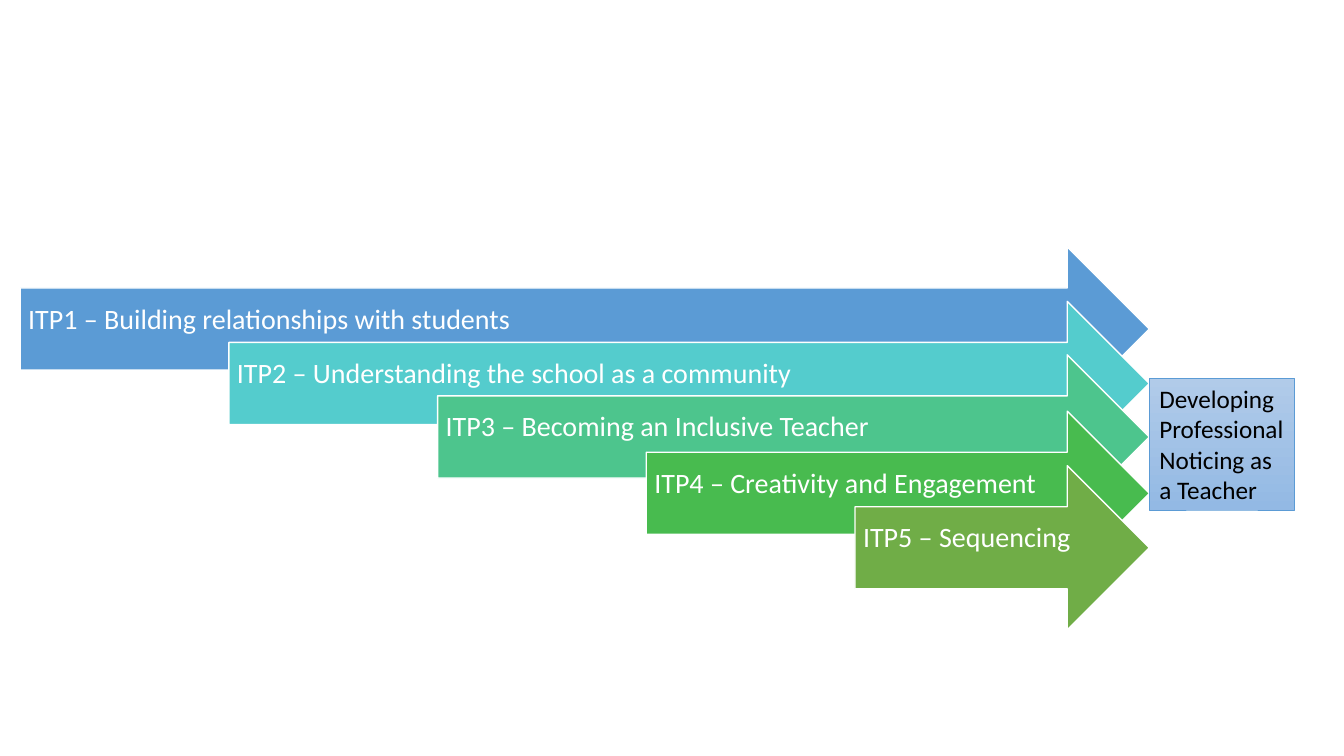
from pptx import Presentation
from pptx.dml.color import RGBColor
from pptx.enum.shapes import MSO_SHAPE
from pptx.enum.text import MSO_ANCHOR, MSO_AUTO_SIZE, PP_ALIGN
from pptx.util import Inches, Pt

ARROW = MSO_SHAPE.RIGHT_ARROW
RECTANGLE = MSO_SHAPE.RECTANGLE
MIDDLE = MSO_ANCHOR.MIDDLE
GROW = MSO_AUTO_SIZE.SHAPE_TO_FIT_TEXT
LEFT = PP_ALIGN.LEFT

COLORS = {
    "blue": "5B9BD5",
    "turquoise": "54CCCD",
    "mint": "4DC58D",
    "green": "48BB4F",
    "olive": "70AD47",
    "white": "FFFFFF",
    "black": "000000",
    "goal_top": "B1CBE9",
    "goal_bottom": "93B9E4",
}

STAGES = [
    ("ITP1 – Building relationships with students", 2.45, "blue"),
    ("ITP2 – Understanding the school as a community", 2.99, "turquoise"),
    ("ITP3 – Becoming an Inclusive Teacher", 3.52, "mint"),
    ("ITP4 – Creativity and Engagement", 4.08, "green"),
    ("ITP5 – Sequencing", 4.62, "olive"),
]
FIRST_LEFT = 0.2
LEFT_STEP = 2.07
ARROW_TIP = 11.4
ARROW_HEIGHT = 1.63


def color(name):
    return RGBColor.from_string(COLORS[name])


def write(shape, text, font="Calibri", size=18, ink="black", spacing=1.0,
          insets=(0.1, 0.05, 0.1, 0.05)):
    frame = shape.text_frame
    frame.word_wrap = True
    frame.vertical_anchor = MIDDLE
    (frame.margin_left, frame.margin_top,
     frame.margin_right, frame.margin_bottom) = map(Inches, insets)
    para = frame.paragraphs[0]
    para.alignment = LEFT
    para.line_spacing = spacing
    span = para.add_run()
    span.text = text
    span.font.name = font
    span.font.size = Pt(size)
    span.font.color.rgb = color(ink)


class SlideBuilder:
    def __init__(self, page, font="Calibri"):
        self.page = page
        self.font = font

    def shape(self, parent, kind, left, top, width, height, line, weight):
        shape = parent.shapes.add_shape(
            kind, Inches(left), Inches(top), Inches(width), Inches(height))
        shape.shadow.inherit = False
        shape.line.color.rgb = color(line)
        shape.line.width = Pt(weight)
        return shape

    def stage_arrow(self, group, text, left, top, fill):
        arrow = self.shape(group, ARROW, left, top, ARROW_TIP - left,
                           ARROW_HEIGHT, "white", 1)
        arrow.fill.solid()
        arrow.fill.fore_color.rgb = color(fill)
        write(arrow, text, font=self.font, size=20, ink="white", spacing=0.9,
              insets=(0.08, 0.08, 0.28, 0.26))

    def goal_box(self, text, left, top, width, height):
        box = self.shape(self.page, RECTANGLE, left, top, width, height,
                         "blue", 0.5)
        box.fill.gradient()
        box.fill.gradient_angle = 270
        for stop, name, position in zip(
                box.fill.gradient_stops, ("goal_top", "goal_bottom"), (0, 1)):
            stop.color.rgb = color(name)
            stop.position = position
        write(box, text, font=self.font)
        box.text_frame.auto_size = GROW


def main():
    deck = Presentation()
    deck.slide_width = Inches(13.33)
    deck.slide_height = Inches(7.5)
    page = deck.slides.add_slide(deck.slide_layouts[6])
    builder = SlideBuilder(page)
    group = page.shapes.add_group_shape()
    for index, (text, top, fill) in enumerate(STAGES):
        builder.stage_arrow(group, text, FIRST_LEFT + index * LEFT_STEP, top, fill)
    builder.goal_box("Developing Professional Noticing as a Teacher",
                     ARROW_TIP, 3.75, 1.44, 1.31)
    deck.save("out.pptx")


if __name__ == "__main__":
    main()
